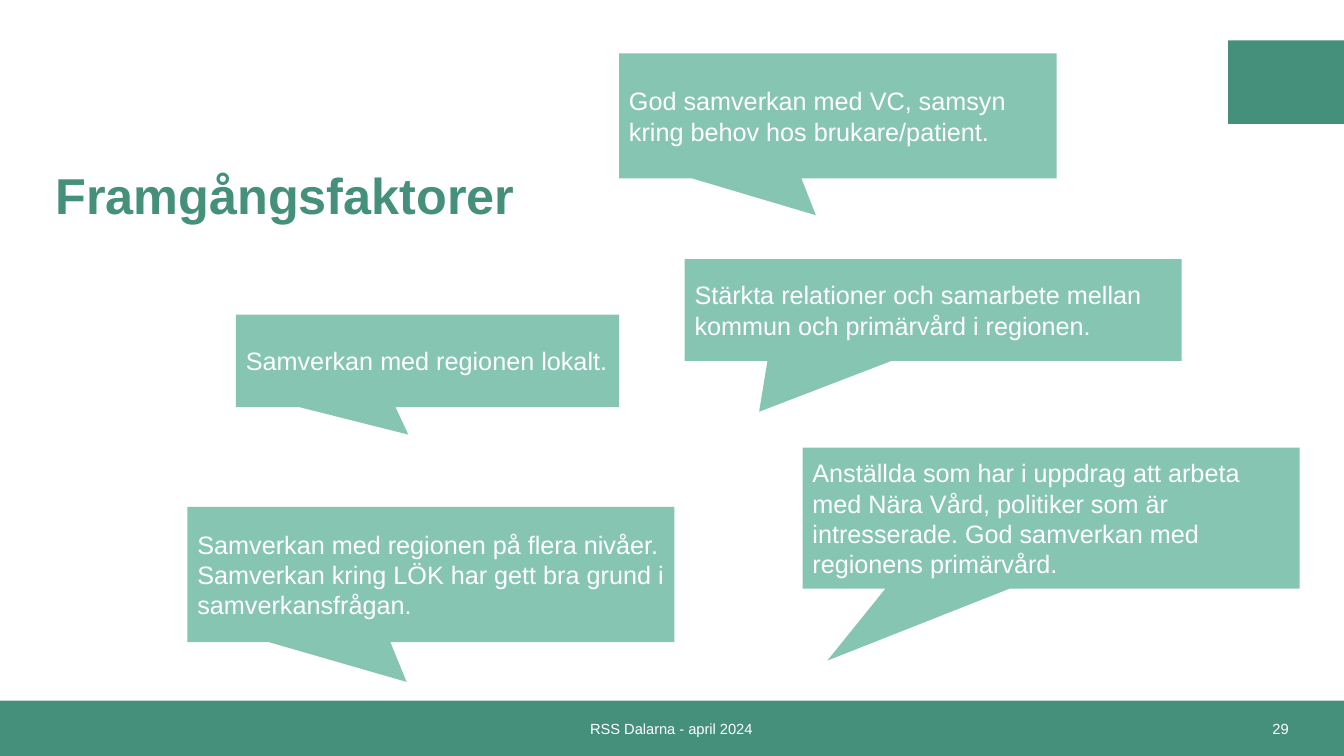
from pptx import Presentation
from pptx.dml.color import RGBColor
from pptx.enum import shapes, text
from pptx.util import Inches, Pt

COLORS = {"dark": "45907A", "light": "87C5B3", "white": "FFFFFF"}
FONT = "Arial"
SLIDE_WIDTH, SLIDE_HEIGHT = 13.33, 7.5

# Each callout: box (left, top, width, height), tail tip, wording
TAIL_RIGHT = (-0.05, 0.795)
CALLOUTS = [
    ((2.34, 3.12, 3.8, 0.92), TAIL_RIGHT, "Samverkan med regionen lokalt."),
    ((1.86, 5.03, 4.83, 1.34), TAIL_RIGHT,
     "Samverkan med regionen på flera nivåer. Samverkan kring LÖK har gett "
     "bra grund i samverkansfrågan."),
    ((7.96, 4.44, 4.93, 1.4), (-0.45, 1.01),
     "Anställda som har i uppdrag att arbeta med Nära Vård, politiker som är "
     "intresserade. God samverkan med regionens primärvård."),
    ((6.79, 2.57, 4.93, 1.01), (-0.35, 1.0),
     "Stärkta relationer och samarbete mellan kommun och primärvård i regionen."),
    ((6.14, 0.53, 4.34, 1.24), TAIL_RIGHT,
     "God samverkan med VC, samsyn kring behov hos brukare/patient."),
]


def write(shape, wording, size, color="white", align=text.PP_ALIGN.LEFT,
          bold=False, line_spacing=1.0):
    frame = shape.text_frame
    frame.word_wrap = True
    frame.vertical_anchor = text.MSO_ANCHOR.MIDDLE
    paragraph = frame.paragraphs[0]
    paragraph.alignment = align
    paragraph.line_spacing = line_spacing
    run = paragraph.add_run()
    run.text = wording
    run.font.name = FONT
    run.font.size = Pt(size)
    run.font.bold = bold
    run.font.color.rgb = RGBColor.from_string(COLORS[color])


def add_filled(slide, kind, box, color):
    shape = slide.shapes.add_shape(kind, *map(Inches, box))
    shape.shadow.inherit = False
    shape.fill.solid()
    shape.fill.fore_color.rgb = RGBColor.from_string(COLORS[color])
    shape.line.fill.background()
    return shape


def add_text(slide, box, wording, size, **style):
    write(slide.shapes.add_textbox(*map(Inches, box)), wording, size, **style)


def add_corner_block(slide, box):
    add_filled(slide, shapes.MSO_SHAPE.RECTANGLE, box, "dark")


def add_footer(slide, box):
    left, top, width, height = box
    add_filled(slide, shapes.MSO_SHAPE.RECTANGLE, box, "dark")
    add_text(slide, (left + 3.91, top, 5.5, height), "RSS Dalarna - april 2024",
             10.5, align=text.PP_ALIGN.CENTER)
    add_text(slide, (left + width - 3.45, top, 3, height), "29", 10.5,
             align=text.PP_ALIGN.RIGHT)


def add_title(slide, box):
    add_text(slide, box, "Framgångsfaktorer", 36, color="dark", bold=True,
             line_spacing=0.9)


def add_callout(slide, box, tail, wording):
    callout = add_filled(slide, shapes.MSO_SHAPE.RECTANGULAR_CALLOUT, box, "light")
    callout.adjustments[0], callout.adjustments[1] = tail
    write(callout, wording, 18)


def main():
    presentation = Presentation()
    presentation.slide_width = Inches(SLIDE_WIDTH)
    presentation.slide_height = Inches(SLIDE_HEIGHT)
    slide = presentation.slides.add_slide(presentation.slide_layouts[6])

    # Frame of the slide
    add_footer(slide, (0, 6.95, SLIDE_WIDTH, 0.55))
    add_corner_block(slide, (12.18, 0.4, SLIDE_WIDTH - 12.18, 0.83))

    # Title and speech bubbles
    add_title(slide, (0.45, 1.31, 11.39, 1.32))
    for box, tail, wording in CALLOUTS:
        add_callout(slide, box, tail, wording)

    presentation.save("out.pptx")


if __name__ == "__main__":
    main()
